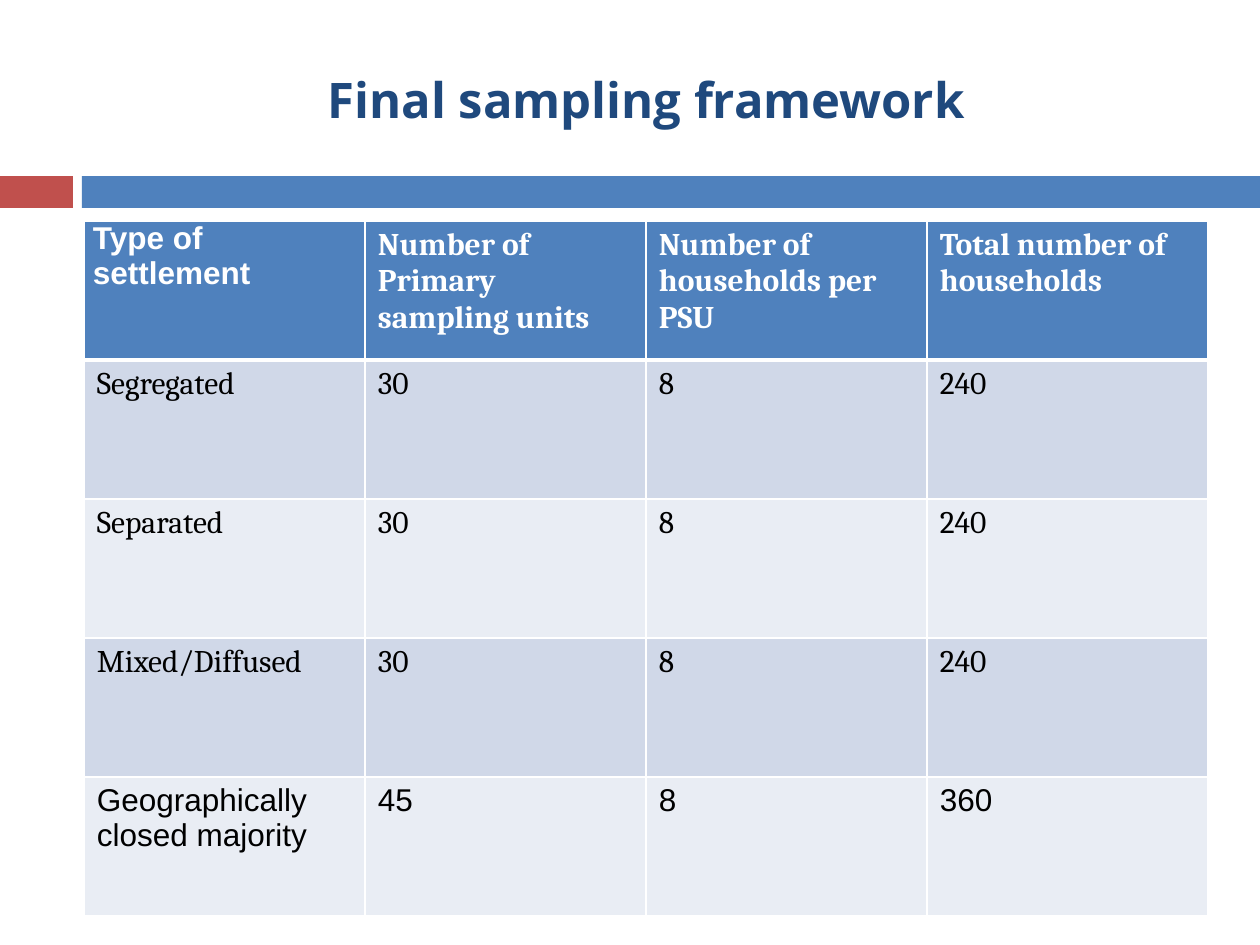
from dataclasses import dataclass

from lxml import etree
from pptx import Presentation
from pptx.dml.color import RGBColor
from pptx.enum.shapes import MSO_SHAPE
from pptx.enum.text import MSO_ANCHOR, PP_ALIGN
from pptx.oxml.ns import qn
from pptx.util import Pt

RECTANGLE = MSO_SHAPE.RECTANGLE
MIDDLE, CENTER, LEFT = MSO_ANCHOR.MIDDLE, PP_ALIGN.CENTER, PP_ALIGN.LEFT

# Content
TITLE = "Final sampling framework"
SAMPLING = [
    ("Type of settlement", "Number of Primary sampling units",
     "Number of households per PSU", "Total number of households"),
    ("Segregated", "30", "8", "240"),
    ("Separated", "30", "8", "240"),
    ("Mixed/Diffused", "30", "8", "240"),
    ("Geographically closed majority", "45", "8", "360"),
]

# Layout in px: left, top, width, height
PX = 914400 // 126
SLIDE_SIZE = (1260, 945)
TITLE_BOX = (84, 31, 1124, 136)
ACCENT_BAR = (0, 176, 73, 32)
MAIN_BAR = (82, 176, 1178, 32)
TABLE_LEFT, TABLE_TOP = 84, 221
COLUMN_WIDTH, ROW_HEIGHT = 281, 139
CELL_INSETS = (13, 6)
CORNER_INSETS = (9, 0)


@dataclass(frozen=True)
class Theme:
    title: str = "1F497D"
    accent: str = "C0504D"
    main: str = "4F81BD"
    bands: tuple = ("D0D8E8", "E9EDF4")
    header_text: str = "FFFFFF"
    body_text: str = "000000"
    border: str = "FFFFFF"
    title_font: str = "Open Sans"
    serif: str = "Cambria"
    sans: str = "Arial"
    title_size: int = 28
    table_size: int = 18
    thin: int = 1
    thick: int = 3


THEME = Theme()


def emu(lengths):
    return [length * PX for length in lengths]


def format_text(paragraph, font, size, color, bold, align):
    paragraph.alignment = align
    for run in paragraph.runs:
        run.font.name = font
        run.font.size = Pt(size)
        run.font.bold = bold
        run.font.color.rgb = RGBColor.from_string(color)


def add_bar(slide, box, color):
    bar = slide.shapes.add_shape(RECTANGLE, *emu(box))
    bar.shadow.inherit = False
    bar.fill.solid()
    bar.fill.fore_color.rgb = RGBColor.from_string(color)
    bar.line.fill.background()


def set_borders(cell, widths):
    properties = cell._tc.get_or_add_tcPr()
    for side, width in widths.items():
        line = etree.SubElement(properties, qn(f"a:ln{side}"), w=str(Pt(width)))
        fill = etree.SubElement(line, qn("a:solidFill"))
        etree.SubElement(fill, qn("a:srgbClr"), val=THEME.border)


def add_title(slide):
    title = slide.shapes.title
    title.left, title.top, title.width, title.height = emu(TITLE_BOX)
    title.text_frame.text = TITLE
    title.text_frame.vertical_anchor = MIDDLE
    format_text(title.text_frame.paragraphs[0], THEME.title_font,
                THEME.title_size, THEME.title, True, CENTER)


def add_sampling_table(slide):
    row_count, column_count = len(SAMPLING), len(SAMPLING[0])
    box = (TABLE_LEFT, TABLE_TOP, column_count * COLUMN_WIDTH, row_count * ROW_HEIGHT)
    table = slide.shapes.add_table(row_count, column_count, *emu(box)).table
    for r, values in enumerate(SAMPLING):
        header = r == 0
        for c, value in enumerate(values):
            cell = table.cell(r, c)
            corner = header and c == 0
            inset_x, inset_y = emu(CORNER_INSETS if corner else CELL_INSETS)
            cell.margin_left = cell.margin_right = inset_x
            cell.margin_top = cell.margin_bottom = inset_y

            # The header is closed off by a thick line
            set_borders(cell, {
                "L": THEME.thin,
                "R": THEME.thin,
                "T": THEME.thick if r == 1 else THEME.thin,
                "B": THEME.thick if header else THEME.thin,
            })
            cell.fill.solid()
            band = THEME.main if header else THEME.bands[(r - 1) % 2]
            cell.fill.fore_color.rgb = RGBColor.from_string(band)

            # The corner and the last row are sans serif
            cell.text_frame.text = value
            font = THEME.sans if corner or r == row_count - 1 else THEME.serif
            color = THEME.header_text if header else THEME.body_text
            format_text(cell.text_frame.paragraphs[0], font,
                        THEME.table_size, color, header, LEFT)


def main():
    deck = Presentation()
    deck.slide_width, deck.slide_height = emu(SLIDE_SIZE)
    slide = deck.slides.add_slide(deck.slide_layouts[5])
    add_bar(slide, ACCENT_BAR, THEME.accent)
    add_bar(slide, MAIN_BAR, THEME.main)
    add_title(slide)
    add_sampling_table(slide)
    deck.save("out.pptx")


if __name__ == "__main__":
    main()
